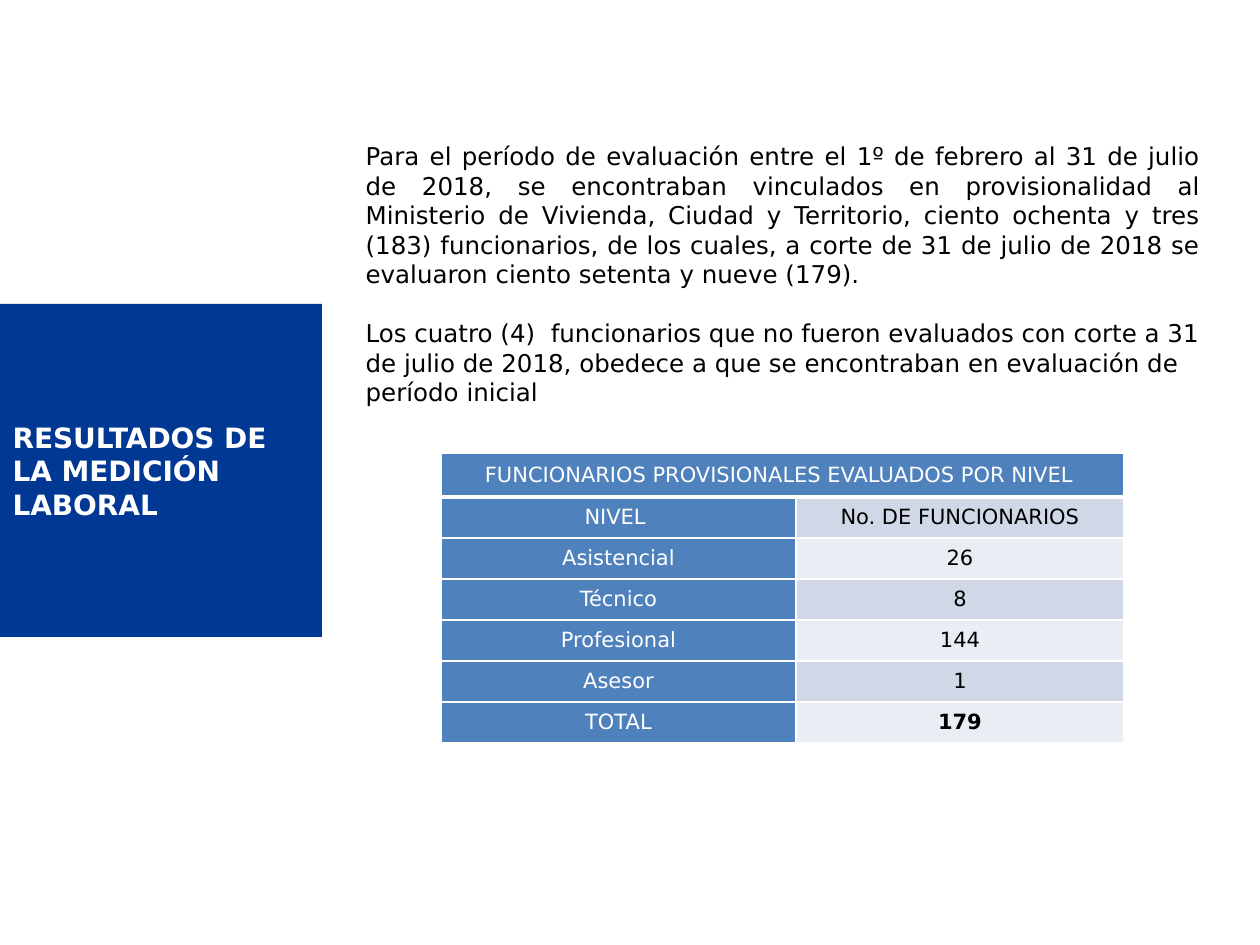
import lxml.etree
import pptx
import pptx.dml.color
import pptx.enum.text
import pptx.oxml.ns
import pptx.util

EMU_PER_PX = 914400 / 126
ALIGN = pptx.enum.text.PP_ALIGN
MIDDLE = pptx.enum.text.MSO_ANCHOR.MIDDLE
TOP = pptx.enum.text.MSO_ANCHOR.TOP
WHITE, BLACK, NAVY, BLUE = "FFFFFF", "000000", "003893", "4F81BD"
BANDS = ("D0D8E8", "E9EDF4")


def px(length):
    return pptx.util.Emu(round(length * EMU_PER_PX))


def color(code):
    return pptx.dml.color.RGBColor.from_string(code)


def add_node(parent, tag, **attributes):
    return lxml.etree.SubElement(parent, pptx.oxml.ns.qn(tag), attributes)


class SlideBuilder:
    font = "DejaVu Sans"

    def __init__(self, slide):
        self.slide = slide

    def add_text(self, paragraph, text, size, code, bold=False, align=ALIGN.LEFT):
        paragraph.alignment = align
        run = paragraph.add_run()
        run.text = text
        run.font.name = self.font
        run.font.size = pptx.util.Pt(size)
        run.font.bold = bold
        run.font.color.rgb = color(code)

    def place(self, holder, box, anchor):
        holder.left, holder.top, holder.width, holder.height = map(px, box)
        frame = holder.text_frame
        frame.word_wrap = True
        frame.auto_size = pptx.enum.text.MSO_AUTO_SIZE.NONE
        frame.vertical_anchor = anchor
        return frame

    def title(self, text, box):
        heading = self.slide.shapes.title
        heading.fill.solid()
        heading.fill.fore_color.rgb = color(NAVY)
        frame = self.place(heading, box, MIDDLE)
        self.add_text(frame.paragraphs[0], text, 16, WHITE, bold=True)

    def body(self, entries, box, gap):
        frame = self.place(self.slide.placeholders[1], box, TOP)
        for index, (text, align) in enumerate(entries):
            paragraph = frame.add_paragraph() if index else frame.paragraphs[0]
            paragraph.space_before = pptx.util.Pt(gap if index else 0)
            self.add_text(paragraph, text, 14, BLACK, align=align)
            properties = paragraph._p.get_or_add_pPr()
            properties.set("marL", "0")
            properties.set("indent", "0")
            add_node(properties, "a:buNone")

    def border(self, cell, bottom):
        properties = cell._tc.get_or_add_tcPr()
        for side, points in (("L", 1), ("R", 1), ("T", 1), ("B", bottom)):
            line = add_node(properties, f"a:ln{side}", w=str(pptx.util.Pt(points)))
            add_node(add_node(line, "a:solidFill"), "a:srgbClr", val=WHITE)

    def cell(self, cell, text, fill, code, bold=False, bottom=1):
        self.border(cell, bottom)
        cell.fill.solid()
        cell.fill.fore_color.rgb = color(fill)
        cell.vertical_anchor = MIDDLE
        cell.margin_left = cell.margin_right = px(9)
        cell.margin_top = cell.margin_bottom = 0
        if text:
            self.add_text(cell.text_frame.paragraphs[0], text, 12, code, bold, ALIGN.CENTER)

    def table(self, heading, rows, origin, widths, heading_height, row_height):
        heights = [heading_height] + [row_height] * len(rows)
        size = (sum(widths), sum(heights))
        table = self.slide.shapes.add_table(
            len(heights), len(widths), *map(px, origin + size)).table
        table.first_row = table.horz_banding = False
        for column, width in zip(table.columns, widths):
            column.width = px(width)
        for row, height in zip(table.rows, heights):
            row.height = px(height)
        table.cell(0, 0).merge(table.cell(0, 1))
        for column, text in enumerate((heading, "")):
            self.cell(table.cell(0, column), text, BLUE, WHITE, bottom=3)
        for index, (level, count) in enumerate(rows):
            is_total = index == len(rows) - 1
            self.cell(table.cell(index + 1, 0), level, BLUE, WHITE)
            self.cell(table.cell(index + 1, 1), count, BANDS[index % 2], BLACK, is_total)


def main():
    deck = pptx.Presentation()
    deck.slide_width, deck.slide_height = px(1260), px(945)
    builder = SlideBuilder(deck.slides.add_slide(deck.slide_layouts[1]))

    builder.title("RESULTADOS DE LA MEDICIÓN LABORAL", (0, 304, 322, 333))

    evaluated = (
        "Para el período de evaluación entre el 1º de febrero al 31 de julio de 2018, "
        "se encontraban vinculados en provisionalidad al Ministerio de Vivienda, Ciudad "
        "y Territorio, ciento ochenta y tres (183) funcionarios, de los cuales, a corte "
        "de 31 de julio de 2018 se evaluaron ciento setenta y nueve (179). ")
    pending = (
        "Los cuatro (4)  funcionarios que no fueron evaluados con corte a 31 de julio de "
        "2018, obedece a que se encontraban en evaluación de período inicial")
    builder.body([(evaluated, ALIGN.JUSTIFY), (pending, ALIGN.LEFT)],
                 (353, 135, 860, 280), gap=17)

    levels = [
        ("NIVEL ", "No. DE FUNCIONARIOS"),
        ("Asistencial", "26"),
        ("Técnico", "8"),
        ("Profesional", "144"),
        ("Asesor", "1"),
        ("TOTAL", "179"),
    ]
    builder.table("FUNCIONARIOS PROVISIONALES EVALUADOS POR NIVEL ", levels,
                  (441, 453), (355, 328), heading_height=44, row_height=41)

    deck.save("out.pptx")


if __name__ == "__main__":
    main()
